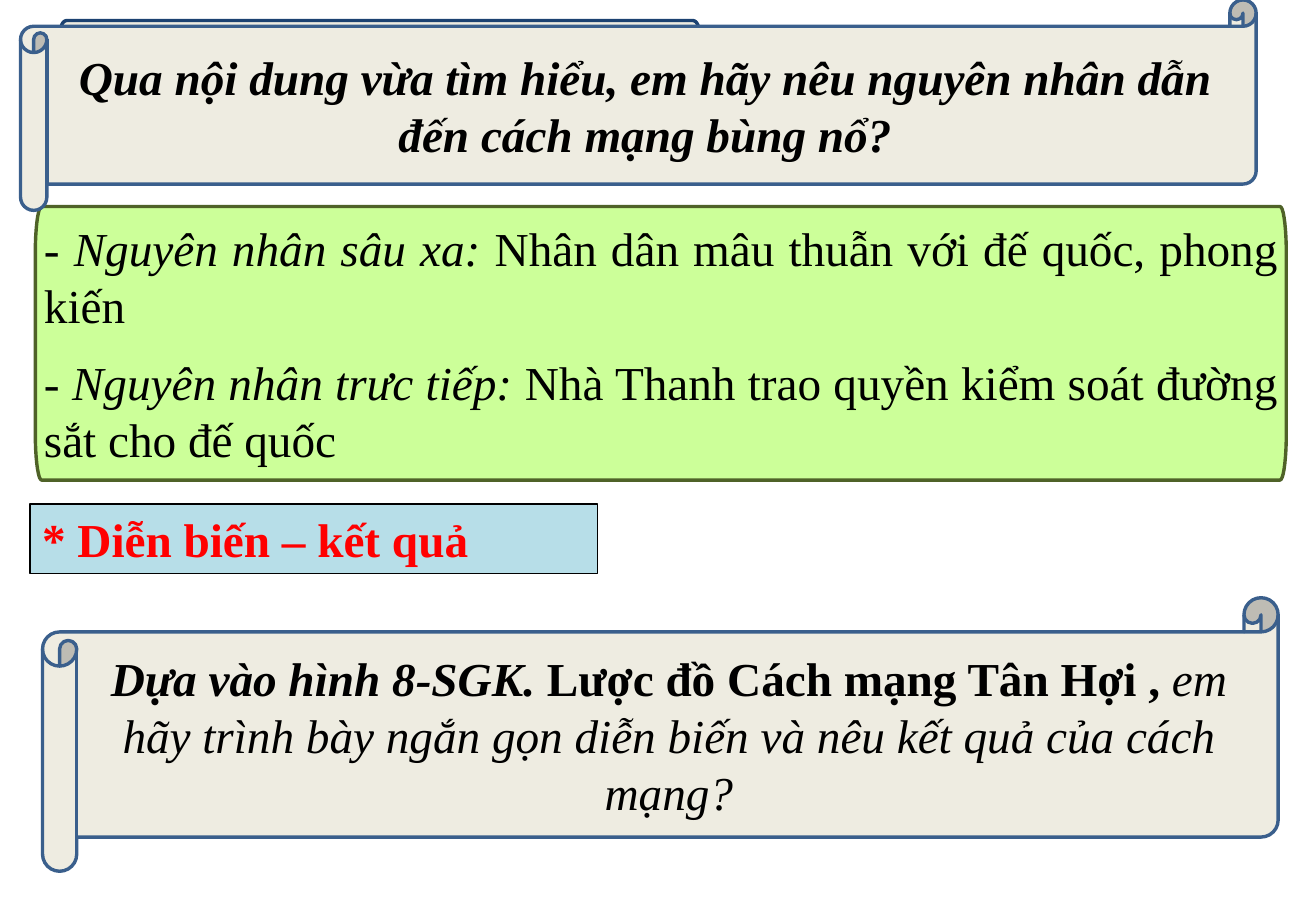
"""Builds the slide on the causes and course of the revolution."""
import math
from pptx import Presentation
from pptx.dml.color import RGBColor
from pptx.enum import shapes, text
from pptx.util import Cm, Pt

COLORS = {"cream": "EEECE1", "lime": "CCFF99", "sky": "B7DEE8", "navy": "1C4271",
          "olive": "4F6228", "blue": "3A5F8C", "black": "000000", "red": "FF0000"}
FONT, SIZE = "Times New Roman", 28

QUESTION = [[("Qua nội dung vừa tìm hiểu, em hãy nêu nguyên nhân dẫn đến cách mạng bùng nổ?", "bi")]]
CAUSES = [
    [("- Nguyên nhân sâu xa: ", "i"), ("Nhân dân mâu thuẫn với đế quốc, phong kiến", "")],
    [("- Nguyên nhân trưc tiếp: ", "i"),
     ("Nhà Thanh trao quyền kiểm soát đường sắt cho đế quốc", "")],
]
HEADING = [[("* Diễn biến – kết quả", "b")]]
TASK = [[("Dựa vào hình 8-SGK. ", "bi"), ("Lược đồ Cách mạng Tân Hợi , ", "b"),
         ("em hãy trình bày ngắn gọn diễn biến và nêu kết quả của cách mạng?", "i")]]


def paint(sp, fill, line, width):
    sp.shadow.inherit = False
    sp.fill.solid()
    sp.fill.fore_color.rgb = RGBColor.from_string(COLORS[fill])
    sp.line.color.rgb = RGBColor.from_string(COLORS[line])
    sp.line.width = Pt(width)
    return sp


def add_preset(s, kind, box, fill, line, width):
    return paint(s.shapes.add_shape(kind, *map(Cm, box)), fill, line, width)


def add_panel(s, box, rx, ry, fill, line):
    """Draw a box whose corners are quarter ellipses."""
    x, y, w, h = box
    corners = [(x + rx, y + ry, 180), (x + w - rx, y + ry, 270),
               (x + w - rx, y + h - ry, 0), (x + rx, y + h - ry, 90)]
    points = []
    for cx, cy, start in corners:
        for step in range(0, 91, 10):
            angle = math.radians(start + step)
            points.append((Cm(cx + rx * math.cos(angle)), Cm(cy + ry * math.sin(angle))))
    fb = s.shapes.build_freeform(*points[0])
    fb.add_line_segments(points[1:], close=True)
    return paint(fb.convert_to_shape(), fill, line, 2)


def write(sp, paragraphs, align, color="black", space=0):
    tf = sp.text_frame
    tf.word_wrap = True
    tf.vertical_anchor = text.MSO_ANCHOR.MIDDLE
    for i, runs in enumerate(paragraphs):
        p = tf.add_paragraph() if i else tf.paragraphs[0]
        p.alignment = align
        p.space_before = p.space_after = Pt(space)
        for words, style in runs:
            r = p.add_run()
            r.text = words
            r.font.name, r.font.size = FONT, Pt(SIZE)
            r.font.bold, r.font.italic = "b" in style, "i" in style
            r.font.color.rgb = RGBColor.from_string(COLORS[color])


def main():
    prs = Presentation()
    prs.slide_width, prs.slide_height = Cm(27.51), Cm(19.05)
    s = prs.slides.add_slide(prs.slide_layouts[6])
    scroll, rect = shapes.MSO_SHAPE.HORIZONTAL_SCROLL, shapes.MSO_SHAPE.RECTANGLE
    align = text.PP_ALIGN

    add_panel(s, (1.27, 0.43, 13.34, 1.27), 0.13, 0.2, "cream", "navy")

    causes = add_panel(s, (0.74, 4.32, 26.15, 5.72), 0.13, 0.96, "lime", "olive")
    write(causes, CAUSES, align.JUSTIFY, space=6)
    tf = causes.text_frame
    tf.margin_left = tf.margin_right = tf.margin_top = tf.margin_bottom = Cm(0.18)

    question = add_preset(s, scroll, (0.43, 0, 25.83, 4.4), "cream", "blue", 2)
    write(question, QUESTION, align.CENTER)

    heading = add_preset(s, rect, (0.63, 10.54, 11.86, 1.45), "sky", "black", 0.75)
    write(heading, HEADING, align.LEFT, "red")

    task = add_preset(s, scroll, (0.89, 12.5, 25.83, 5.72), "cream", "blue", 2)
    write(task, TASK, align.CENTER)

    prs.save("out.pptx")


if __name__ == "__main__":
    main()
